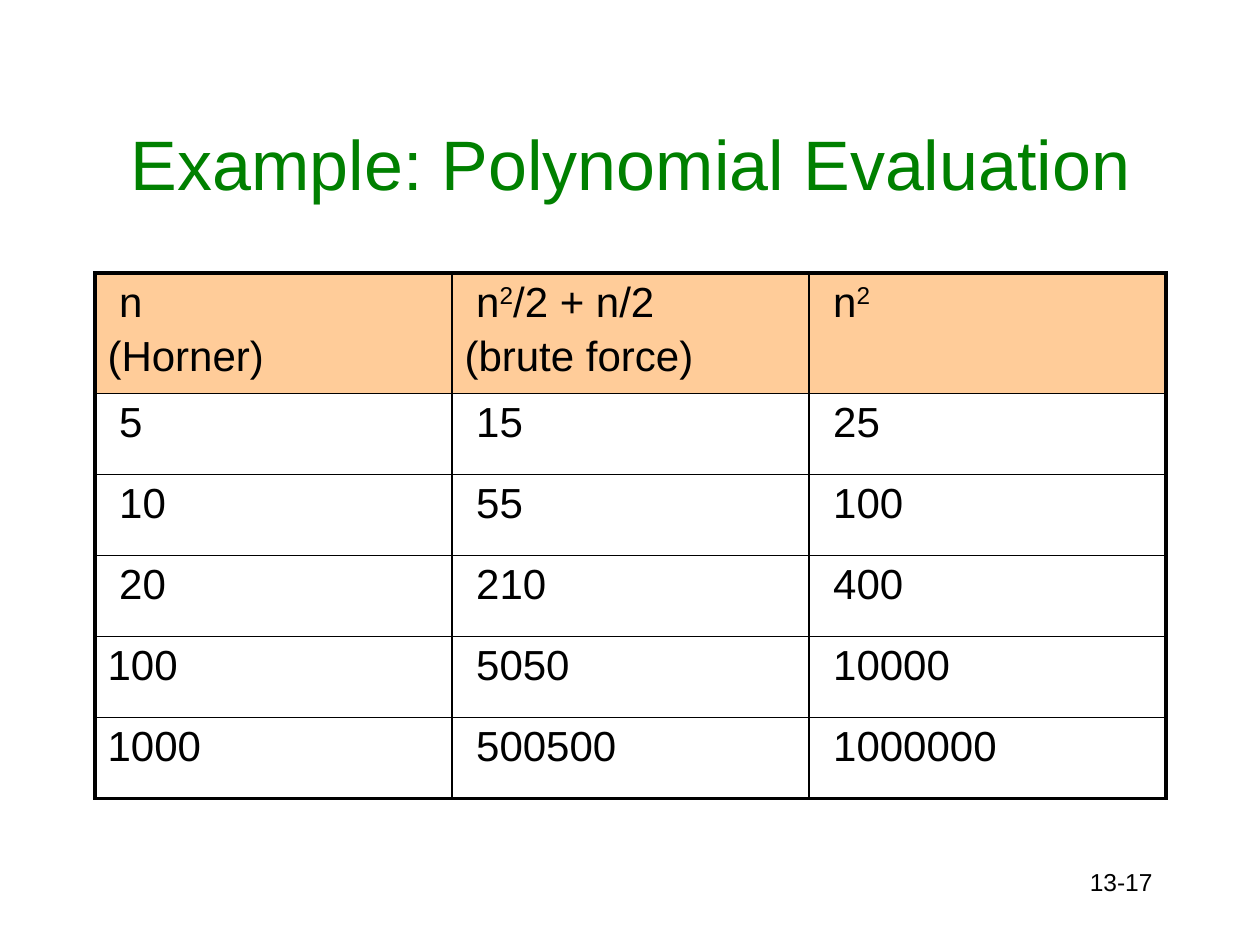
from lxml.etree import SubElement
from pptx import Presentation
from pptx.dml.color import RGBColor
from pptx.enum.text import MSO_ANCHOR as Anchor, PP_ALIGN as Align
from pptx.oxml.ns import qn
from pptx.util import Pt

EMU_PER_PX = 914400 / 126
FONT = "Arial"
COLORS = {"title": "008000", "text": "000000", "border": "000000", "header": "FFCC99"}
OUTER_BORDER, INNER_BORDER = 2.25, 1
COLUMN_WIDTH, HEADER_HEIGHT, ROW_HEIGHT = 357, 115, 81
SUPERSCRIPT_MARK = "^"
ROWS = [
    [" n\n(Horner)", " n^2^/2 + n/2\n(brute force)", " n^2"],
    [" 5", " 15", " 25"],
    [" 10", " 55", " 100"],
    [" 20", " 210", " 400"],
    ["100", " 5050", " 10000"],
    ["1000", " 500500", " 1000000"],
]


def px(length):
    return round(length * EMU_PER_PX)


def format_font(font, size, color):
    font.name = FONT
    font.size = Pt(size)
    font.bold = False
    font.color.rgb = RGBColor.from_string(COLORS[color])


def add_text(slide, text, box, size, color, align, anchor=Anchor.TOP):
    shape = slide.shapes.add_textbox(*map(px, box))
    frame = shape.text_frame
    frame.word_wrap = True
    frame.vertical_anchor = anchor
    frame.text = text
    paragraph = frame.paragraphs[0]
    paragraph.alignment = align
    format_font(paragraph.runs[0].font, size, color)


def fill_paragraph(paragraph, text):
    for index, part in enumerate(text.split(SUPERSCRIPT_MARK)):
        if not part:
            continue
        run = paragraph.add_run()
        run.text = part
        format_font(run.font, 24, "text")
        if index % 2:
            run._r.get_or_add_rPr().set("baseline", "30000")


def fill_cell(cell, text):
    frame = cell.text_frame
    for index, line in enumerate(text.split("\n")):
        paragraph = frame.add_paragraph() if index else frame.paragraphs[0]
        if index:
            paragraph.space_before = Pt(4)
        fill_paragraph(paragraph, line)


def set_borders(cell, outer_sides):
    properties = cell._tc.get_or_add_tcPr()
    for side, is_outer in outer_sides.items():
        width = OUTER_BORDER if is_outer else INNER_BORDER
        line = SubElement(properties, qn(f"a:ln{side}"), w=str(Pt(width)))
        fill = SubElement(line, qn("a:solidFill"))
        SubElement(fill, qn("a:srgbClr"), val=COLORS["border"])


def add_grid(slide, rows, left, top):
    row_count, column_count = len(rows), len(rows[0])
    heights = [HEADER_HEIGHT] + [ROW_HEIGHT] * (row_count - 1)
    table = slide.shapes.add_table(
        row_count, column_count, px(left), px(top),
        px(COLUMN_WIDTH * column_count), px(sum(heights)),
    ).table
    table.first_row = False
    table.horz_banding = False
    for column in table.columns:
        column.width = px(COLUMN_WIDTH)
    for row_index, texts in enumerate(rows):
        table.rows[row_index].height = px(heights[row_index])
        for column_index, text in enumerate(texts):
            cell = table.cell(row_index, column_index)
            fill_cell(cell, text)
            set_borders(cell, {
                "L": column_index == 0,
                "R": column_index == column_count - 1,
                "T": row_index == 0,
                "B": row_index == row_count - 1,
            })
            if row_index == 0:
                cell.fill.solid()
                cell.fill.fore_color.rgb = RGBColor.from_string(COLORS["header"])
            else:
                cell.fill.background()


def main():
    presentation = Presentation()
    presentation.slide_width = px(1260)
    presentation.slide_height = px(945)
    slide = presentation.slides.add_slide(presentation.slide_layouts[6])
    add_text(slide, "Example: Polynomial Evaluation", (95, 84, 1071, 158),
             40, "title", Align.CENTER, Anchor.MIDDLE)
    add_grid(slide, ROWS, 95, 273)
    add_text(slide, "13-17", (903, 861, 262, 63), 14, "text", Align.RIGHT)
    presentation.save("out.pptx")


if __name__ == "__main__":
    main()
